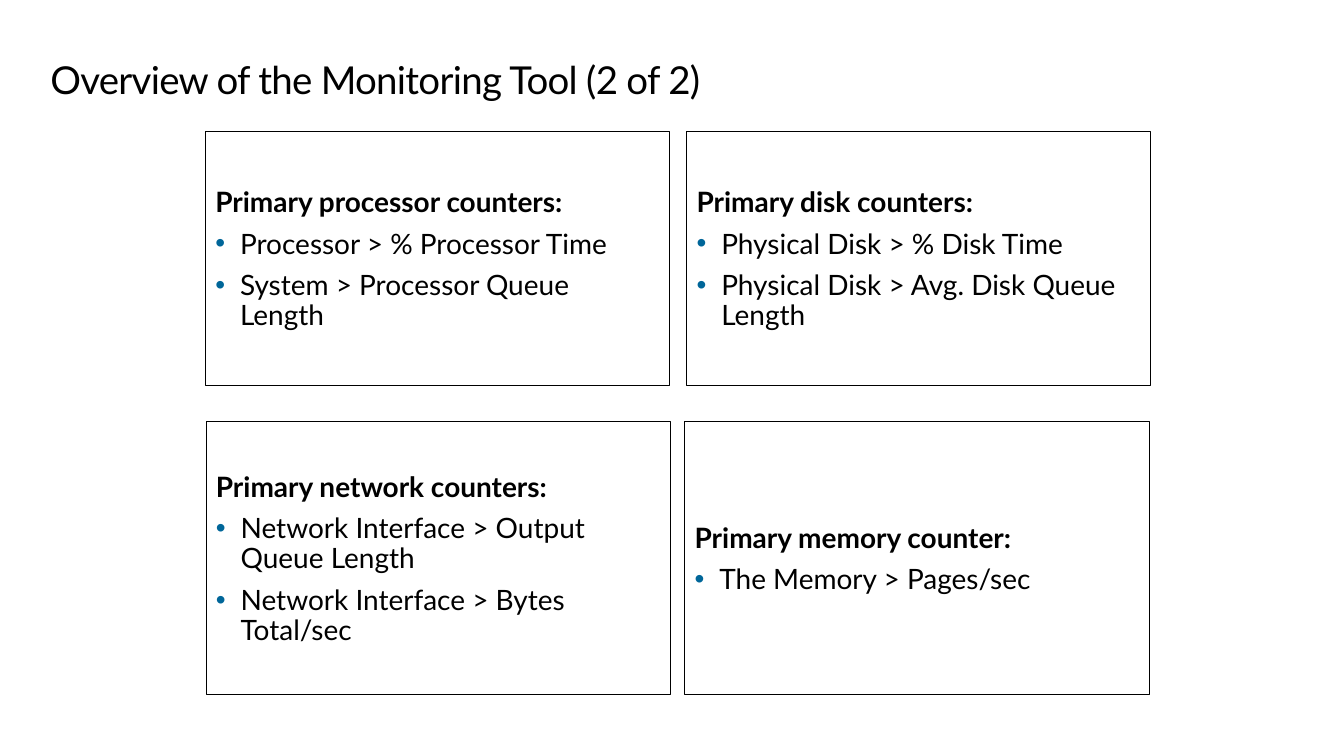
from lxml.etree import SubElement
from pptx import Presentation
from pptx.dml.color import RGBColor
from pptx.enum.shapes import MSO_SHAPE
from pptx.enum.text import MSO_ANCHOR, MSO_AUTO_SIZE, PP_ALIGN
from pptx.oxml.ns import qn
from pptx.util import Pt

COLORS = {"text": "000000", "bullet": "006699"}
FONT = "Lato"


def format_run(run, size, bold=False):
    run.font.name = FONT
    run.font.size = Pt(size)
    run.font.bold = bold
    run.font.color.rgb = RGBColor.from_string(COLORS["text"])


def add_bullet(paragraph):
    properties = paragraph._p.get_or_add_pPr()
    properties.set("marL", str(Pt(18)))
    properties.set("indent", str(Pt(-18)))
    color = SubElement(properties, qn("a:buClr"))
    SubElement(color, qn("a:srgbClr")).set("val", COLORS["bullet"])
    SubElement(properties, qn("a:buFont")).set("typeface", "Arial")
    SubElement(properties, qn("a:buChar")).set("char", "•")


presentation = Presentation()
presentation.slide_width = Pt(979.2)
presentation.slide_height = Pt(550.8)
slide = presentation.slides.add_slide(presentation.slide_layouts[5])

# Title
title = slide.shapes.title
title.left, title.top, title.width, title.height = Pt(36.7), Pt(44.6), Pt(908), Pt(32.4)
frame = title.text_frame
frame.text = "Overview of the Monitoring Tool (2 of 2)"
frame.auto_size = MSO_AUTO_SIZE.NONE
frame.word_wrap = True
frame.vertical_anchor = MSO_ANCHOR.TOP
frame.margin_left = frame.margin_top = frame.margin_bottom = 0
frame.margin_right = Pt(7.2)
heading = frame.paragraphs[0]
heading.alignment = PP_ALIGN.LEFT
heading.line_spacing = 0.9
format_run(heading.runs[0], 28)
heading.runs[0].font._element.set("spc", "-50")

# Counter boxes: left, top, height, heading, counters
BOX_WIDTH = 338.2
ROW_1, ROW_2 = (95.8, 185), (307.4, 198.7)
counter_boxes = [
    (149.8, *ROW_1, "Primary processor counters:",
     ["Processor > % Processor Time", "System > Processor Queue Length"]),
    (500.4, *ROW_1, "Primary disk counters:",
     ["Physical Disk > % Disk Time", "Physical Disk > Avg. Disk Queue Length"]),
    (150.2, *ROW_2, "Primary network counters:",
     ["Network Interface > Output Queue Length", "Network Interface > Bytes Total/sec"]),
    (499, *ROW_2, "Primary memory counter:", ["The Memory > Pages/sec"]),
]

for left, top, height, box_heading, counters in counter_boxes:
    shape = slide.shapes.add_shape(
        MSO_SHAPE.RECTANGLE, Pt(left), Pt(top), Pt(BOX_WIDTH), Pt(height))
    shape.shadow.inherit = False
    shape.fill.background()
    shape.line.color.rgb = RGBColor.from_string(COLORS["text"])
    shape.line.width = Pt(0.75)
    frame = shape.text_frame
    frame.word_wrap = True
    frame.vertical_anchor = MSO_ANCHOR.MIDDLE
    frame.text = "\n".join([box_heading, *counters])
    for index, paragraph in enumerate(frame.paragraphs):
        paragraph.alignment = PP_ALIGN.LEFT
        if index > 0:
            paragraph.line_spacing = 0.9
            paragraph.space_before = Pt(8.2)
            add_bullet(paragraph)
        format_run(paragraph.runs[0], 20.4, bold=index == 0)

presentation.save("out.pptx")
